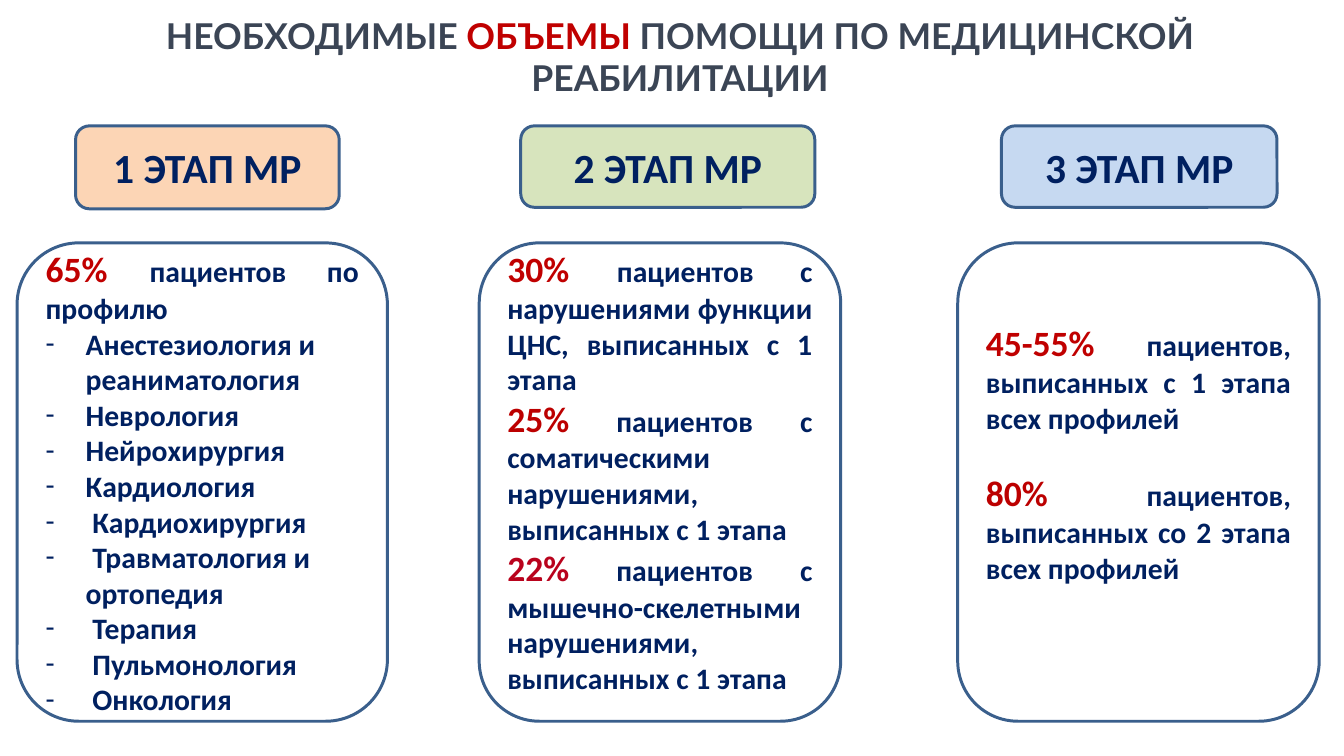
from lxml import etree
from pptx import Presentation
from pptx.dml.color import RGBColor
from pptx.enum.shapes import MSO_SHAPE
from pptx.enum.text import MSO_ANCHOR, MSO_AUTO_SIZE, PP_ALIGN
from pptx.oxml.ns import qn
from pptx.util import Pt

ROUNDED = MSO_SHAPE.ROUNDED_RECTANGLE
MIDDLE = MSO_ANCHOR.MIDDLE
NO_FIT = MSO_AUTO_SIZE.NONE
CENTER, JUSTIFY, LEFT = PP_ALIGN.CENTER, PP_ALIGN.JUSTIFY, PP_ALIGN.LEFT
NAVY, RED, SLATE = "002060", "C00000", "3B4555"
INDENT = Pt(27)


def color(hex_code):
    return RGBColor.from_string(hex_code)


def add_box(left, top, width, height, fill):
    box = page.shapes.add_shape(ROUNDED, Pt(left), Pt(top), Pt(width), Pt(height))
    box.shadow.inherit = False
    box.fill.solid()
    box.fill.fore_color.rgb = color(fill)
    box.line.color.rgb = color("3A5F8C")
    box.line.width = Pt(2)
    box.text_frame.word_wrap = True
    box.text_frame.vertical_anchor = MIDDLE
    return box


deck = Presentation()
deck.slide_width, deck.slide_height = Pt(907.2), Pt(510.5)
page = deck.slides.add_slide(deck.slide_layouts[5])

title = page.shapes.title
title.left, title.top, title.width, title.height = Pt(28), Pt(20), Pt(862), Pt(65)
frame = title.text_frame
frame.auto_size = NO_FIT
frame.word_wrap = True
frame.vertical_anchor = MIDDLE
frame.margin_left = frame.margin_right = Pt(8)
frame.margin_top, frame.margin_bottom = Pt(4), Pt(33)
para = frame.paragraphs[0]
para.alignment = CENTER
para.font.name, para.font.size, para.font.bold = "Lato", Pt(24), True
for text, ink in [
    ("НЕОБХОДИМЫЕ ", SLATE),
    ("ОБЪЕМЫ", RED),
    (" ПОМОЩИ ПО МЕДИЦИНСКОЙ РЕАБИЛИТАЦИИ", SLATE),
]:
    span = para.add_run()
    span.text = text
    span.font.color.rgb = color(ink)

stages = [
    (51, 178, 56, "FCD5B5"),
    (351.5, 198.5, 55, "D7E4BD"),
    (676, 186, 55, "C6D9F1"),
]
for number, (left, width, height, fill) in enumerate(stages, 1):
    box = add_box(left, 85, width, height, fill)
    para = box.text_frame.paragraphs[0]
    para.text = f"{number} ЭТАП МР"
    para.alignment = CENTER
    para.font.name, para.font.size, para.font.bold = "Calibri", Pt(28), True
    para.font.color.rgb = color(NAVY)

volumes = [
    (11.5, 250, 3.6, 0, [("65% ", RED, "пациентов по профилю")]),
    (323.5, 244, 18, 0, [
        ("30% ", RED, "пациентов с нарушениями функции ЦНС, выписанных с 1 этапа"),
        ("25%", "BC0000", " пациентов с соматическими нарушениями, выписанных с 1 этапа"),
        ("22%", "B9031D", " пациентов с мышечно-скелетными нарушениями, выписанных с 1 этапа"),
    ]),
    (646.5, 244, 42.6, 24.4, [
        ("45-55% ", RED, "пациентов, выписанных с 1 этапа всех профилей"),
        ("80%", "BC0000", " пациентов, выписанных со 2 этапа всех профилей"),
    ]),
]
frames = []
for left, width, bottom_margin, gap, shares in volumes:
    frame = add_box(left, 164, width, 323, "FFFFFF").text_frame
    frame.margin_bottom = Pt(bottom_margin)
    frames.append(frame)
    for index, (percent, ink, patients) in enumerate(shares):
        para = frame.add_paragraph() if index else frame.paragraphs[0]
        para.alignment = JUSTIFY
        if index:
            para.space_before = Pt(gap)
        para.font.name, para.font.bold = "Calibri", True
        for text, size, shade in [(percent, 24, ink), (patients, 20, NAVY)]:
            span = para.add_run()
            span.text = text
            span.font.size = Pt(size)
            span.font.color.rgb = color(shade)

profiles = [
    "Анестезиология и реаниматология",
    "Неврология",
    "Нейрохирургия",
    "Кардиология",
    " Кардиохирургия",
    " Травматология и ортопедия",
    " Терапия",
    " Пульмонология",
    " Онкология",
]
for profile in profiles:
    para = frames[0].add_paragraph()
    para.text = profile
    para.alignment = LEFT
    properties = para._p.get_or_add_pPr()
    properties.set("marL", str(INDENT))
    properties.set("indent", str(-INDENT))
    etree.SubElement(properties, qn("a:buFont")).set("typeface", "Calibri")
    etree.SubElement(properties, qn("a:buChar")).set("char", "-")
    para.font.name, para.font.size, para.font.bold = "Calibri", Pt(20), True
    para.font.color.rgb = color(NAVY)

deck.save("out.pptx")
